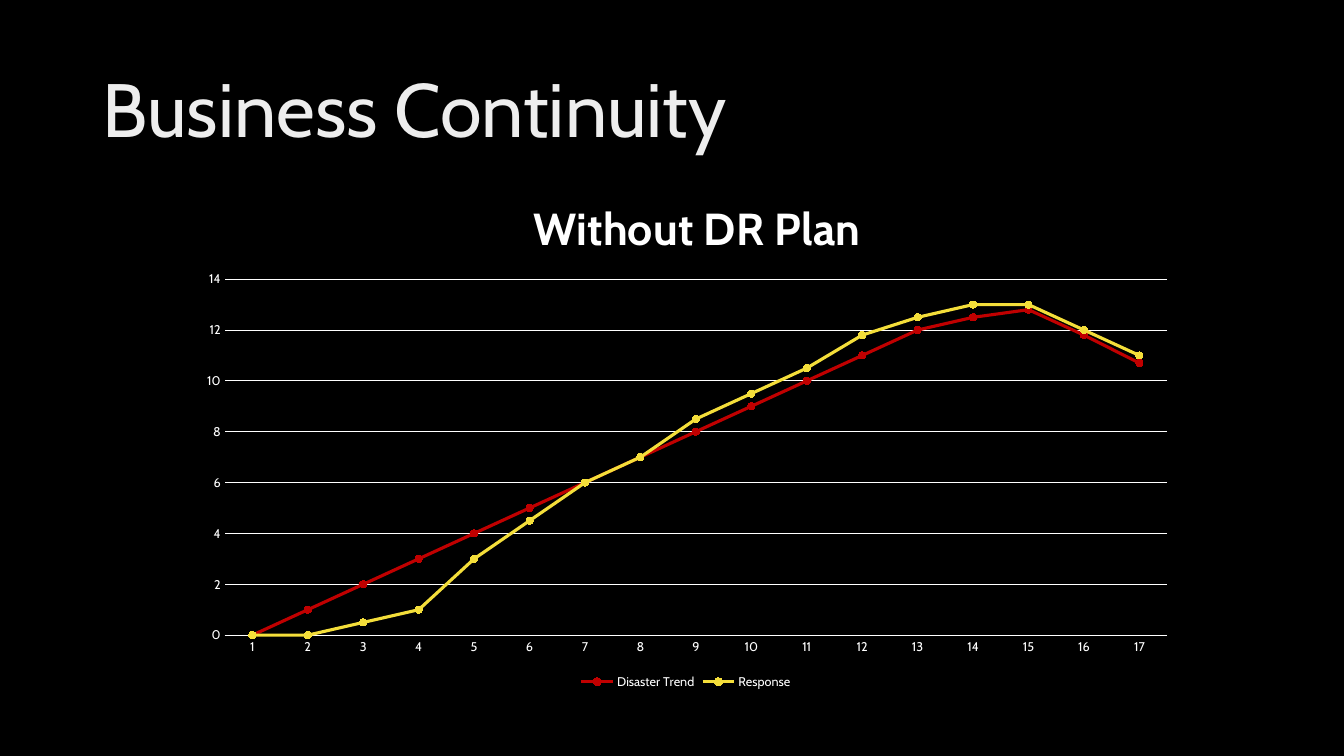
from lxml import etree
from pptx import Presentation
from pptx import util as u
from pptx.chart.data import CategoryChartData
from pptx.dml.color import RGBColor
from pptx.enum import chart as c, text
from pptx.oxml.ns import qn

TITLE = "Business Continuity"
CHART_TITLE = "Without DR Plan"
FONT = "Cabin"
COLORS = {
    "background": "000000",
    "title": "EDEDED",
    "text": "FFFFFF",
    "Disaster Trend": "C00000",
    "Response": "F4DE3A",
}
SERIES = {
    "Disaster Trend": [0, 1, 2, 3, 4, 5, 6, 7, 8, 9, 10, 11, 12, 12.5, 12.8, 11.8, 10.7],
    "Response": [0, 0, 0.5, 1, 3, 4.5, 6, 7, 8.5, 9.5, 10.5, 11.8, 12.5, 13, 13, 12, 11],
}
TITLE_BOX = [u.Cm(n) for n in (2.33, 1.02, 29.21, 3.68)]
CHART_BOX = [u.Cm(n) for n in (4.65, 4.09, 25.27, 13.39)]
PLOT_LAYOUT = {"x": 0.04, "y": 0.22, "w": 0.94, "h": 0.67}
CHART_TITLE_LAYOUT = {"x": 0.34, "y": 0.05}


def color(name):
    return RGBColor.from_string(COLORS[name])


def style_font(font, size, name="text", bold=False):
    font.name = FONT
    font.size = u.Pt(size)
    font.bold = bold
    font.color.rgb = color(name)


def style_line(line, name, width):
    line.color.rgb = color(name)
    line.width = u.Pt(width)


def set_layout(parent, position, fractions, inner=False):
    for existing in parent.findall(qn("c:layout")):
        parent.remove(existing)
    layout = etree.Element(qn("c:layout"))
    manual = etree.SubElement(layout, qn("c:manualLayout"))
    settings = {"layoutTarget": "inner"} if inner else {}
    settings.update(xMode="edge", yMode="edge", **fractions)
    for tag, value in settings.items():
        etree.SubElement(manual, qn("c:" + tag)).set("val", str(value))
    parent.insert(position, layout)


def add_title(slide):
    title = slide.shapes.title
    title.left, title.top, title.width, title.height = TITLE_BOX
    frame = title.text_frame
    frame.text = TITLE
    frame.word_wrap = True
    frame.vertical_anchor = text.MSO_ANCHOR.MIDDLE
    paragraph = frame.paragraphs[0]
    paragraph.alignment = text.PP_ALIGN.LEFT
    paragraph.line_spacing = 0.9
    style_font(paragraph.runs[0].font, 54, "title")


def add_trend_chart(slide):
    data = CategoryChartData()
    data.categories = [str(n + 1) for n in range(len(SERIES["Response"]))]
    for name, values in SERIES.items():
        data.add_series(name, values)
    chart = slide.shapes.add_chart(c.XL_CHART_TYPE.LINE_MARKERS, *CHART_BOX, data).chart
    style_font(chart.font, 10)

    chart.has_title = True
    frame = chart.chart_title.text_frame
    frame.text = CHART_TITLE
    style_font(frame.paragraphs[0].runs[0].font, 32, bold=True)

    chart.has_legend = True
    chart.legend.position = c.XL_LEGEND_POSITION.BOTTOM
    chart.legend.include_in_layout = False
    style_font(chart.legend.font, 9)

    for axis in (chart.category_axis, chart.value_axis):
        axis.major_tick_mark = axis.minor_tick_mark = c.XL_TICK_MARK.NONE
        style_font(axis.tick_labels.font, 9)
    style_line(chart.category_axis.format.line, "text", 0.75)
    value_axis = chart.value_axis
    value_axis.format.line.fill.background()
    value_axis.minimum_scale, value_axis.maximum_scale, value_axis.major_unit = 0, 14, 2
    style_line(value_axis.major_gridlines.format.line, "text", 0.75)

    plot = chart.plots[0]
    plot.vary_by_categories = False
    for series in plot.series:
        series.smooth = False
        style_line(series.format.line, series.name, 2.25)
        marker = series.marker
        marker.style = c.XL_MARKER_STYLE.CIRCLE
        marker.size = 5
        marker.format.fill.solid()
        marker.format.fill.fore_color.rgb = color(series.name)
        style_line(marker.format.line, series.name, 0.75)

    chart_element = chart.element.find(qn("c:chart"))
    set_layout(chart_element.find(qn("c:title")), 1, CHART_TITLE_LAYOUT)
    set_layout(chart_element.find(qn("c:plotArea")), 0, PLOT_LAYOUT, inner=True)


def main():
    presentation = Presentation()
    presentation.slide_width, presentation.slide_height = u.Cm(33.87), u.Cm(19.05)
    slide = presentation.slides.add_slide(presentation.slide_layouts[5])
    slide.background.fill.solid()
    slide.background.fill.fore_color.rgb = color("background")
    add_title(slide)
    add_trend_chart(slide)
    presentation.save("out.pptx")


if __name__ == "__main__":
    main()
